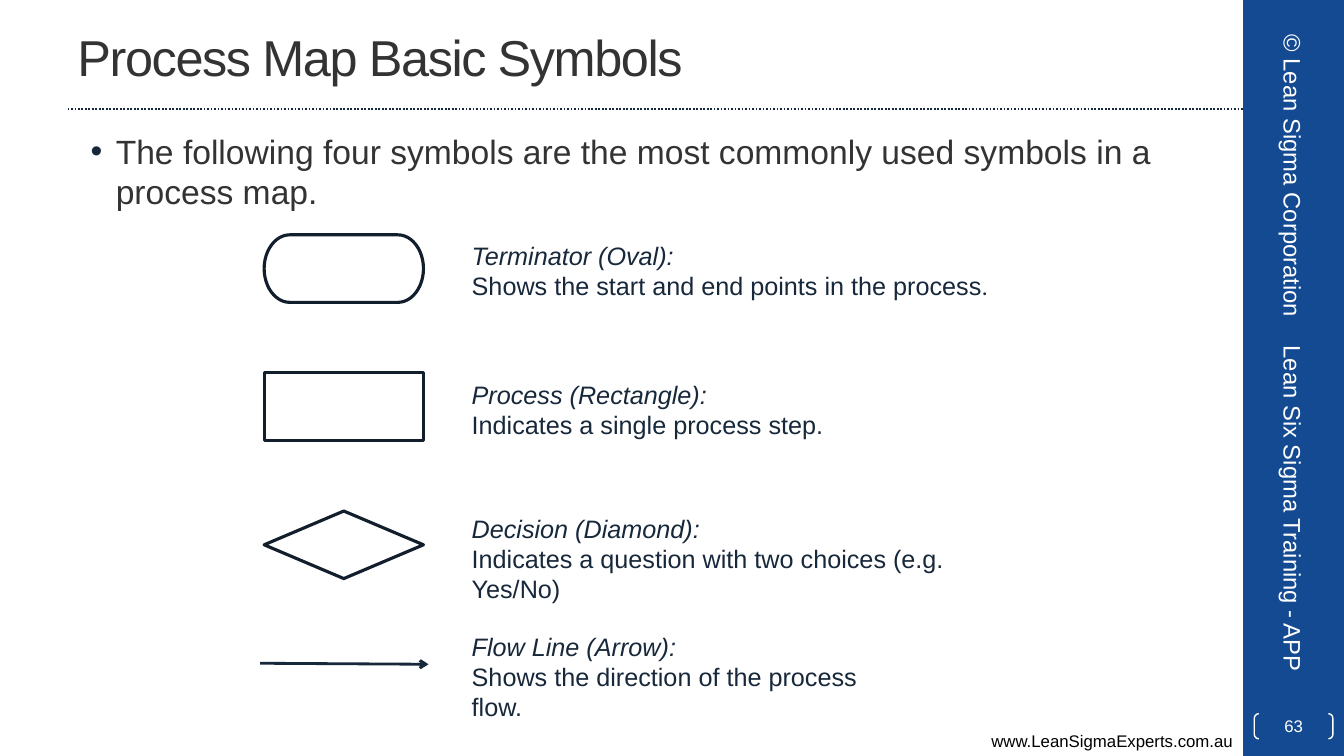
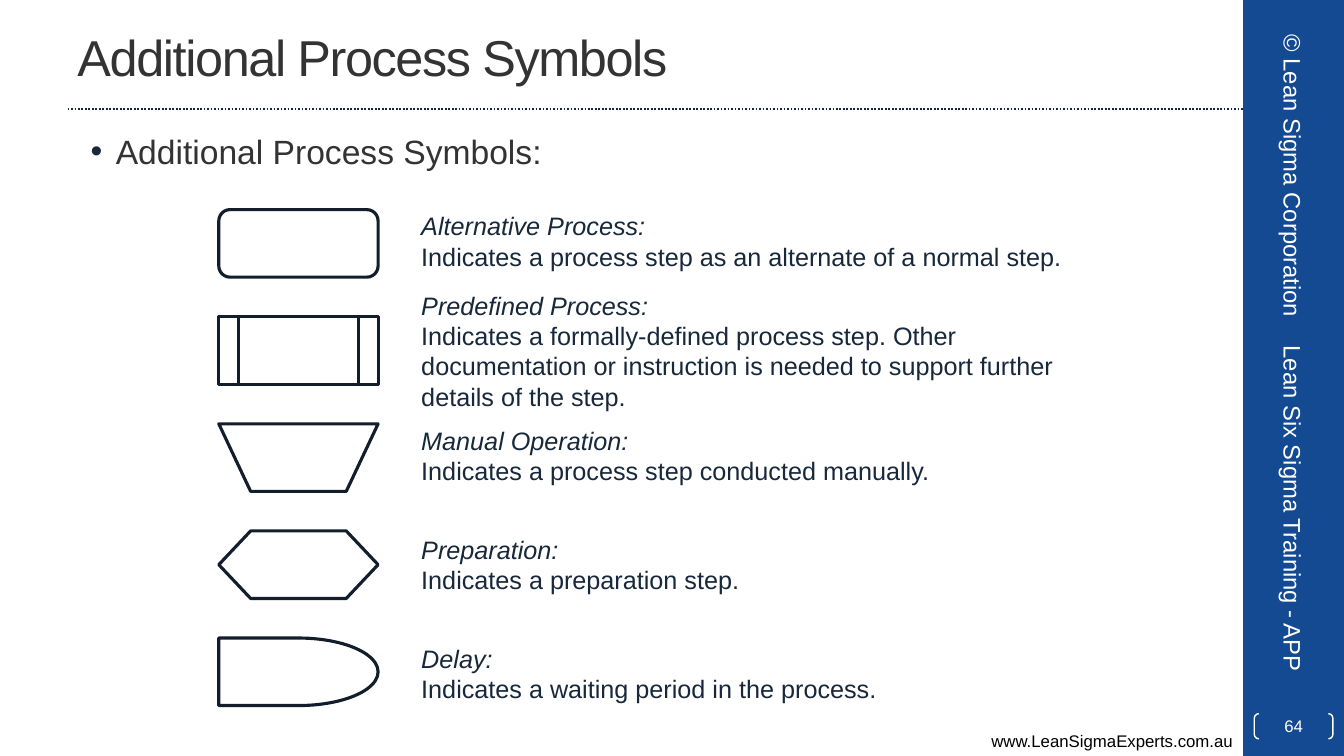
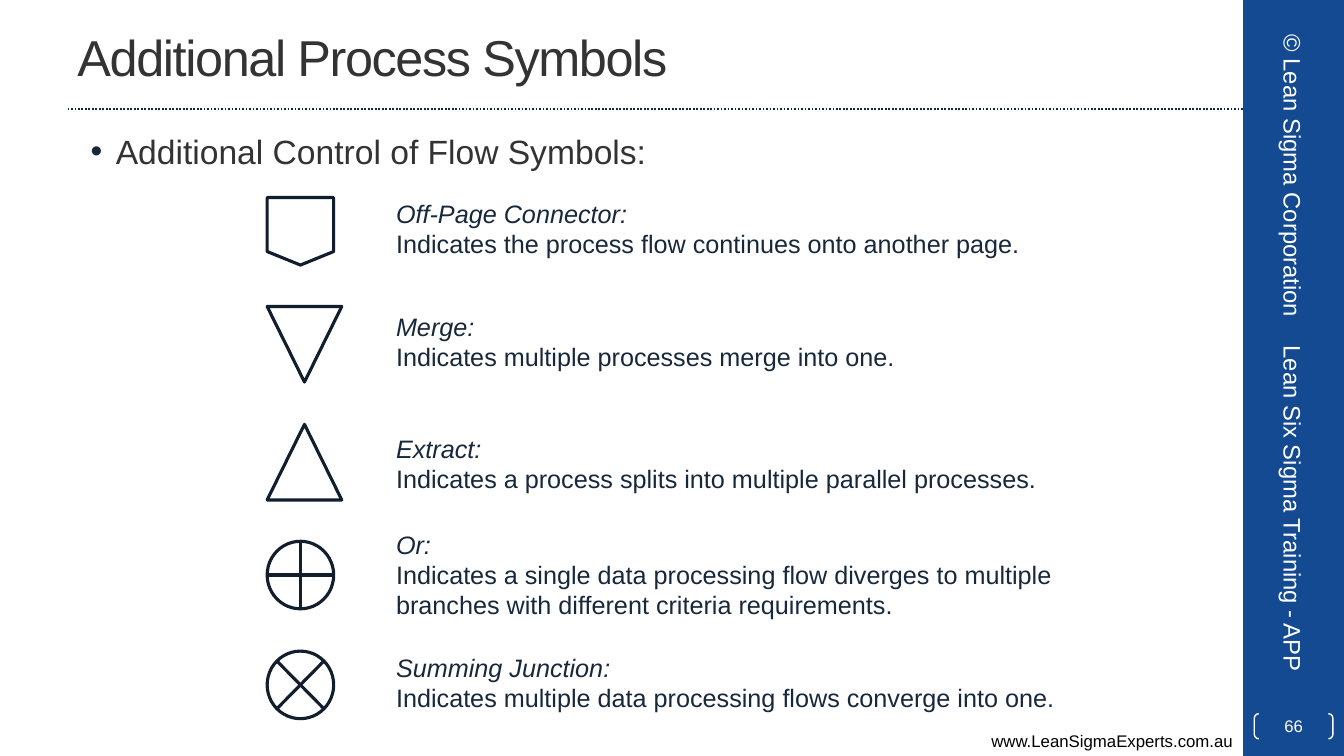
import pptx
import pptx.dml.color
import pptx.enum.dml
import pptx.enum.shapes
import pptx.enum.text
import pptx.oxml.ns
import pptx.util
from lxml import etree

Inches = pptx.util.Inches
Pt = pptx.util.Pt
SHAPE = pptx.enum.shapes.MSO_SHAPE
ALIGN = pptx.enum.text.PP_ALIGN
ANCHOR = pptx.enum.text.MSO_ANCHOR

COLORS = {
    "band": "144A92",
    "rule": "17273B",
    "heading": "333333",
    "outline": "121E2C",
    "ink": "18283B",
    "white": "FFFFFF",
    "black": "000000",
}
FONT = "Arial"
LINE_HEIGHT = 0.3  # one line of 18 pt description text


def rgb(name):
    return pptx.dml.color.RGBColor.from_string(COLORS[name])


def add_xml(parent, tag, **attributes):
    return etree.SubElement(parent, pptx.oxml.ns.qn(tag), **attributes)


# Element helpers
def write_text(frame, paragraphs, size=18, color="ink", align=None,
               anchor=ANCHOR.TOP, margins=None, bullet=False, spacing=None):
    """Each paragraph is a list of (text, font settings) runs."""
    frame.word_wrap = True
    frame.vertical_anchor = anchor
    if margins is not None:
        frame.margin_left = frame.margin_right = Inches(margins)
        frame.margin_top = frame.margin_bottom = Inches(margins)
    for index, runs in enumerate(paragraphs):
        paragraph = frame.add_paragraph() if index else frame.paragraphs[0]
        if align is not None:
            paragraph.alignment = align
        if bullet:
            properties = paragraph._p.get_or_add_pPr()
            properties.set("marL", str(Inches(0.38)))
            properties.set("indent", str(Inches(-0.25)))
            bullet_color = add_xml(properties, "a:buClr")
            add_xml(bullet_color, "a:srgbClr", val=COLORS["ink"])
            add_xml(properties, "a:buFont", typeface=FONT)
            add_xml(properties, "a:buChar", char="•")
        for text, settings in runs:
            run = paragraph.add_run()
            run.text = text
            run.font.size = Pt(size)
            run.font.name = settings.get("font", FONT)
            run.font.italic = settings.get("italic")
            run.font.color.rgb = rgb(color)
            if spacing is not None:
                run._r.get_or_add_rPr().set("spc", str(spacing * 100))


def add_text(slide, box, paragraphs, rotation=0, grow=False, **text_format):
    if isinstance(paragraphs, str):
        paragraphs = [[(paragraphs, {})]]
    text_box = slide.shapes.add_textbox(*map(Inches, box))
    text_box.rotation = rotation
    write_text(text_box.text_frame, paragraphs, **text_format)
    if grow:
        text_box.text_frame.auto_size = pptx.enum.text.MSO_AUTO_SIZE.SHAPE_TO_FIT_TEXT


def add_shape(slide, preset, box, fill=None, line=None, line_width=1):
    shape = slide.shapes.add_shape(preset, *map(Inches, box))
    shape.shadow.inherit = False
    if fill:
        shape.fill.solid()
        shape.fill.fore_color.rgb = rgb(fill)
    else:
        shape.fill.background()
    if line:
        shape.line.color.rgb = rgb(line)
        shape.line.width = Pt(line_width)
    else:
        shape.line.fill.background()
    return shape


def add_line(slide, start, end, color, width, dash=None, arrow=False):
    line = slide.shapes.add_connector(
        pptx.enum.shapes.MSO_CONNECTOR.STRAIGHT, *map(Inches, start + end))
    line.line.color.rgb = rgb(color)
    line.line.width = Pt(width)
    if dash is not None:
        line.line.dash_style = dash
    if arrow:
        add_xml(line.line._get_or_add_ln(), "a:tailEnd", type="arrow")
    add_xml(line._element.spPr, "a:effectLst")


def add_description(slide, left, top, width, lines, name, detail):
    """Italic symbol name above its meaning; lines is the total line count."""
    if isinstance(detail, str):
        detail = [(detail, {})]
    add_text(slide, (left, top, width, 0.11 + LINE_HEIGHT * lines),
             [[(name, {"italic": True})], detail], grow=True)


def add_symbols(slide, left, symbols):
    for preset, top, size in symbols:
        add_shape(slide, preset, (left, top) + size, line="outline", line_width=2.25)


# Parts shared by every slide
def start_slide(deck, title, lead, number):
    slide = deck.slides.add_slide(deck.slide_layouts[6])
    add_shape(slide, SHAPE.RECTANGLE, (12.33, 0, 1, 7.5), fill="band")
    add_line(slide, (0.67, 1.08), (12.33, 1.08), "rule", 1.25,
             dash=pptx.enum.dml.MSO_LINE.ROUND_DOT)
    add_text(slide, (0, 7.2, 12.33, 0.3), "www.LeanSigmaExperts.com.au",
             size=12, color="black", align=ALIGN.RIGHT, grow=True)
    add_text(slide, (0.67, 0.03, 11.11, 1.05), title, size=36,
             color="heading", anchor=ANCHOR.MIDDLE, spacing=-1)
    add_text(slide, (0.67, 1.25, 11.11, 6), lead, size=24,
             color="heading", bullet=True)
    page_number = add_shape(slide, SHAPE.DOUBLE_BRACKET,
                            (12.44, 7.08, 0.78, 0.25), line="white")
    page_number.adjustments[0] = 0.18
    write_text(page_number.text_frame, [[(str(number), {})]], size=12, color="white",
               align=ALIGN.CENTER, anchor=ANCHOR.MIDDLE, margins=0)
    band_format = dict(rotation=90, size=17, color="white", anchor=ANCHOR.MIDDLE)
    add_text(slide, (11.24, 1.48, 3.17, 0.53), "© Lean Sigma Corporation",
             align=ALIGN.CENTER, **band_format)
    add_text(slide, (10.99, 4.9, 3.67, 0.53), "Lean Six Sigma Training - APP",
             **band_format)
    return slide


# Slides
WIDE = (1.58, 0.67)
SMALL = (0.66, 0.67)
TRIANGLE = (0.74, 0.75)


def basic_symbols(deck):
    slide = start_slide(
        deck, "Process Map Basic Symbols",
        "The following four symbols are the most commonly used symbols in a process map.", 63)
    presets = (SHAPE.FLOWCHART_TERMINATOR, SHAPE.FLOWCHART_PROCESS, SHAPE.FLOWCHART_DECISION)
    add_symbols(slide, 2.62, [(preset, 2.33 + 1.37 * row, WIDE)
                              for row, preset in enumerate(presets)])
    add_line(slide, (2.58, 6.58), (4.25, 6.59), "ink", 2, arrow=True)
    for top, width, lines, name, detail in (
        (2.33, 5.38, 2, "Terminator (Oval):",
         [("Shows the start and end points in the process", {}), (".", {"font": "Roboto"})]),
        (3.71, 4.58, 2, "Process (Rectangle):", "Indicates a single process step."),
        (5.04, 5.46, 3, "Decision (Diamond):",
         "Indicates a question with two choices (e.g. Yes/No)"),
        (6.21, 4.58, 3, "Flow Line (Arrow):", "Shows the direction of the process flow."),
    ):
        add_description(slide, 4.58, top, width, lines, name, detail)


def process_symbols(deck):
    slide = start_slide(deck, "Additional Process Symbols", "Additional Process Symbols:", 64)
    presets = (SHAPE.FLOWCHART_ALTERNATE_PROCESS, SHAPE.FLOWCHART_PREDEFINED_PROCESS,
               SHAPE.FLOWCHART_MANUAL_OPERATION, SHAPE.FLOWCHART_PREPARATION,
               SHAPE.FLOWCHART_DELAY)
    row_pitch = (6.33 - 2.08) / (len(presets) - 1)
    add_symbols(slide, 2.17, [(preset, 2.08 + row_pitch * row, WIDE)
                              for row, preset in enumerate(presets)])
    for top, lines, name, detail in (
        (2.04, 2, "Alternative Process:",
         "Indicates a process step as an alternate of a normal step."),
        (2.83, 4, "Predefined Process:",
         "Indicates a formally-defined process step. Other documentation or instruction "
         "is needed to support further details of the step."),
        (4.17, 2, "Manual Operation:", "Indicates a process step conducted manually."),
        (5.25, 2, "Preparation:", "Indicates a preparation step."),
        (6.33, 2, "Delay:", "Indicates a waiting period in the process."),
    ):
        add_description(slide, 4.08, top, 6.67, lines, name, detail)


def flow_control_symbols(deck):
    slide = start_slide(deck, "Additional Process Symbols",
                        "Additional Control of Flow Symbols:", 66)
    add_symbols(slide, 2.65, [
        (SHAPE.FLOWCHART_OFFPAGE_CONNECTOR, 1.96, SMALL),
        (SHAPE.FLOWCHART_MERGE, 3.04, TRIANGLE),
        (SHAPE.FLOWCHART_EXTRACT, 4.21, TRIANGLE),
        (SHAPE.FLOWCHART_OR, 5.37, SMALL),
        (SHAPE.FLOWCHART_SUMMING_JUNCTION, 6.46, SMALL),
    ])
    for top, lines, name, detail in (
        (1.92, 2, "Off-Page Connector:",
         "Indicates the process flow continues onto another page."),
        (3.04, 2, "Merge:", "Indicates multiple processes merge into one."),
        (4.25, 2, "Extract:", "Indicates a process splits into multiple parallel processes."),
        (5.2, 3, "Or:",
         "Indicates a single data processing flow diverges to multiple branches "
         "with different criteria requirements."),
        (6.42, 2, "Summing Junction:",
         "Indicates multiple data processing flows converge into one."),
    ):
        add_description(slide, 3.83, top, 7, lines, name, detail)


def main():
    deck = pptx.Presentation()
    deck.slide_width = Inches(13.33)
    deck.slide_height = Inches(7.5)
    basic_symbols(deck)
    process_symbols(deck)
    flow_control_symbols(deck)
    deck.save("out.pptx")


if __name__ == "__main__":
    main()
